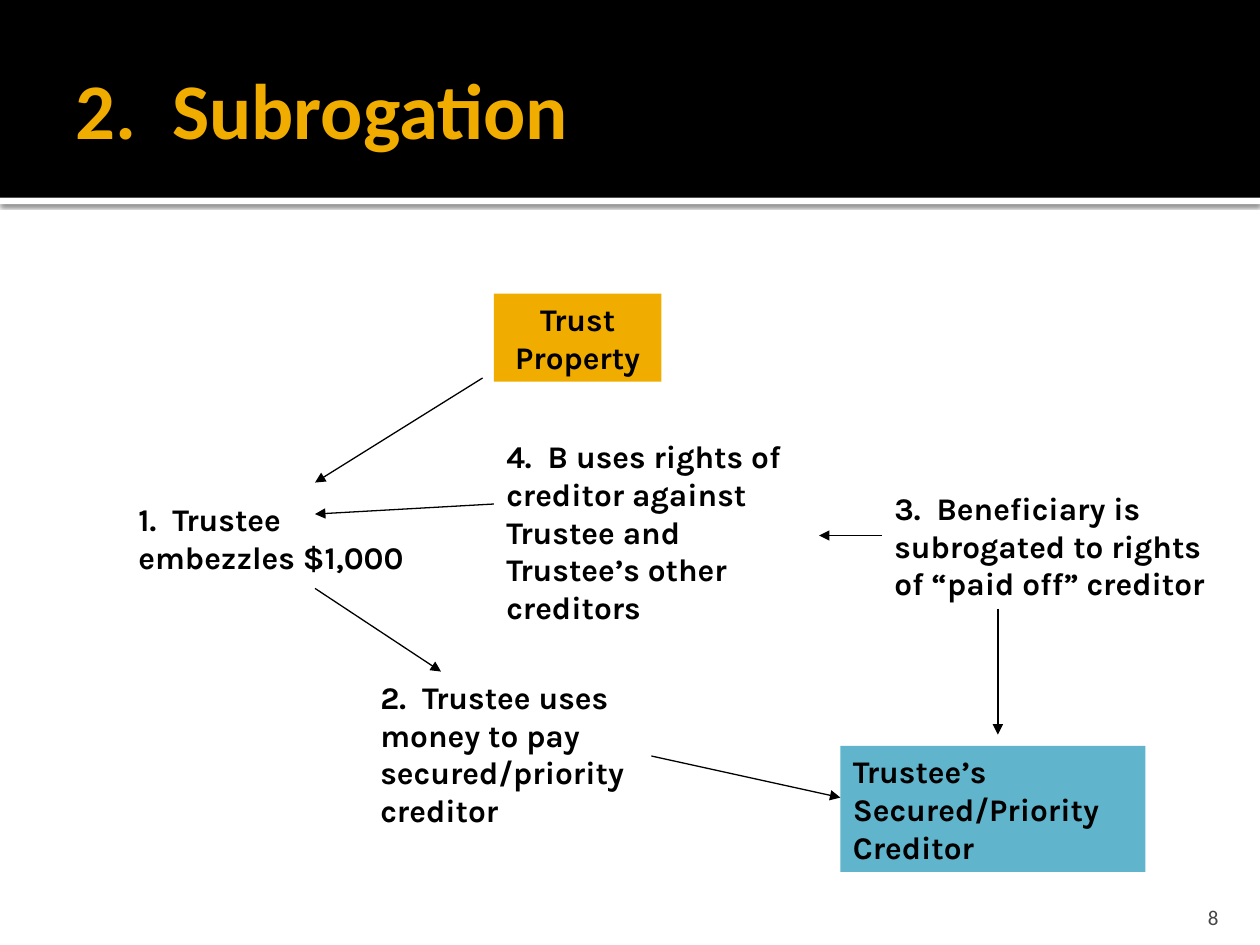
from dataclasses import dataclass

from lxml import etree
from pptx import Presentation
from pptx.dml.color import RGBColor
from pptx.enum.shapes import MSO_CONNECTOR, MSO_SHAPE
from pptx.enum.text import MSO_ANCHOR, MSO_AUTO_SIZE, PP_ALIGN
from pptx.oxml.ns import qn
from pptx.util import Inches, Pt

RECT = MSO_SHAPE.RECTANGLE
STRAIGHT = MSO_CONNECTOR.STRAIGHT
TOP, MIDDLE, BOTTOM = MSO_ANCHOR.TOP, MSO_ANCHOR.MIDDLE, MSO_ANCHOR.BOTTOM
LEFT, CENTER, RIGHT = PP_ALIGN.LEFT, PP_ALIGN.CENTER, PP_ALIGN.RIGHT
NO_AUTOFIT = MSO_AUTO_SIZE.NONE


@dataclass(frozen=True)
class Theme:
    black: str = "000000"
    white: str = "FFFFFF"
    gold: str = "F0AD00"
    blue: str = "60B5CC"
    grey: str = "454545"
    heading_font: str = "Calibri"
    body_font: str = "Karla"
    title_size: float = 45
    body_size: float = 18
    number_size: float = 12
    line_width: float = 0.75


THEME = Theme()

BOXES = [
    ("Trust Property", (3.92, 2.33, 1.33, 0.7), THEME.gold, CENTER),
    ("Trustee’s Secured/Priority Creditor", (6.67, 5.92, 2.42, 1), THEME.blue, LEFT),
]
STEPS = [
    ("1.  Trustee\vembezzles $1,000", (1, 3.92, 2.92, 0.7)),
    ("2.  Trustee uses money to pay secured/priority creditor", (2.92, 5.33, 2.42, 1.3)),
    ("3.  Beneficiary is subrogated to rights of “paid off” creditor", (7, 3.83, 2.83, 1)),
    ("4.  B uses rights of creditor against Trustee and Trustee’s other creditors",
     (3.92, 3.42, 2.67, 1.6)),
]
ARROWS = [
    ((3.83, 3), (2.5, 3.83)),
    ((2.5, 4.67), (3.5, 5.33)),
    ((5.17, 6), (6.67, 6.33)),
    ((7.92, 4.83), (7.92, 5.83)),
    ((7, 4.25), (6.5, 4.25)),
    ((3.92, 4), (2.5, 4.08)),
]


def inches(values):
    return [Inches(v) for v in values]


def set_text(sp, text, font=THEME.body_font, size=THEME.body_size, color=THEME.black,
             bold=True, align=LEFT, anchor=TOP, insets=(0.1, 0.05, 0.1, 0.05)):
    tf = sp.text_frame
    tf.text = text
    tf.word_wrap = True
    tf.auto_size = NO_AUTOFIT
    tf.vertical_anchor = anchor
    tf.margin_left, tf.margin_top, tf.margin_right, tf.margin_bottom = inches(insets)
    p = tf.paragraphs[0]
    p.alignment = align
    for r in p.runs:
        r.font.name = font
        r.font.size = Pt(size)
        r.font.bold = bold
        r.font.color.rgb = RGBColor.from_string(color)


def add_rect(s, at, color):
    sp = s.shapes.add_shape(RECT, *inches(at))
    sp.shadow.inherit = False
    sp.fill.solid()
    sp.fill.fore_color.rgb = RGBColor.from_string(color)
    sp.line.fill.background()
    return sp


def add_drop_shadow(sp):
    effects = sp._element.spPr.find(qn("a:effectLst"))
    shadow = etree.SubElement(effects, qn("a:outerShdw"), blurRad=str(Pt(2.5)),
                              dist=str(Pt(0.8)), dir="5400000", algn="tl", rotWithShape="0")
    color = etree.SubElement(shadow, qn("a:srgbClr"), val=THEME.black)
    etree.SubElement(color, qn("a:alpha"), val="60000")


def add_header(s, title):
    add_drop_shadow(add_rect(s, (0, 1.57, 10, 0.05), THEME.white))
    add_rect(s, (0, 0, 10, 1.57), THEME.black)
    sp = s.shapes.title
    s.shapes._spTree.append(sp._element)
    sp.left, sp.top, sp.width, sp.height = inches((0.5, 0.17, 9, 1.37))
    set_text(sp, title, THEME.heading_font, THEME.title_size, THEME.gold,
             anchor=MIDDLE, insets=(0.1, 0.05, 0.05, 0.05))


def add_label(s, text, at, **style):
    set_text(s.shapes.add_textbox(*inches(at)), text, **style)


def add_arrow(s, start, end):
    line = s.shapes.add_connector(STRAIGHT, *inches(start + end))
    line.line.color.rgb = RGBColor.from_string(THEME.black)
    line.line.width = Pt(THEME.line_width)
    etree.SubElement(line.line._get_or_add_ln(), qn("a:tailEnd"), type="triangle")
    etree.SubElement(line._element.spPr, qn("a:effectLst"))


def main():
    prs = Presentation()
    prs.slide_width, prs.slide_height = inches((10, 7.5))
    s = prs.slides.add_slide(prs.slide_layouts[5])
    add_header(s, "2.  Subrogation")
    for text, at, color, align in BOXES:
        set_text(add_rect(s, at, color), text, align=align)
    for text, at in STEPS:
        add_label(s, text, at)
    for start, end in ARROWS:
        add_arrow(s, start, end)
    add_label(s, "8", (8.97, 7.08, 0.8, 0.3), font=THEME.heading_font,
              size=THEME.number_size, color=THEME.grey, bold=False,
              align=RIGHT, anchor=BOTTOM, insets=(0.1, 0.05, 0.1, 0))
    prs.save("out.pptx")


if __name__ == "__main__":
    main()
